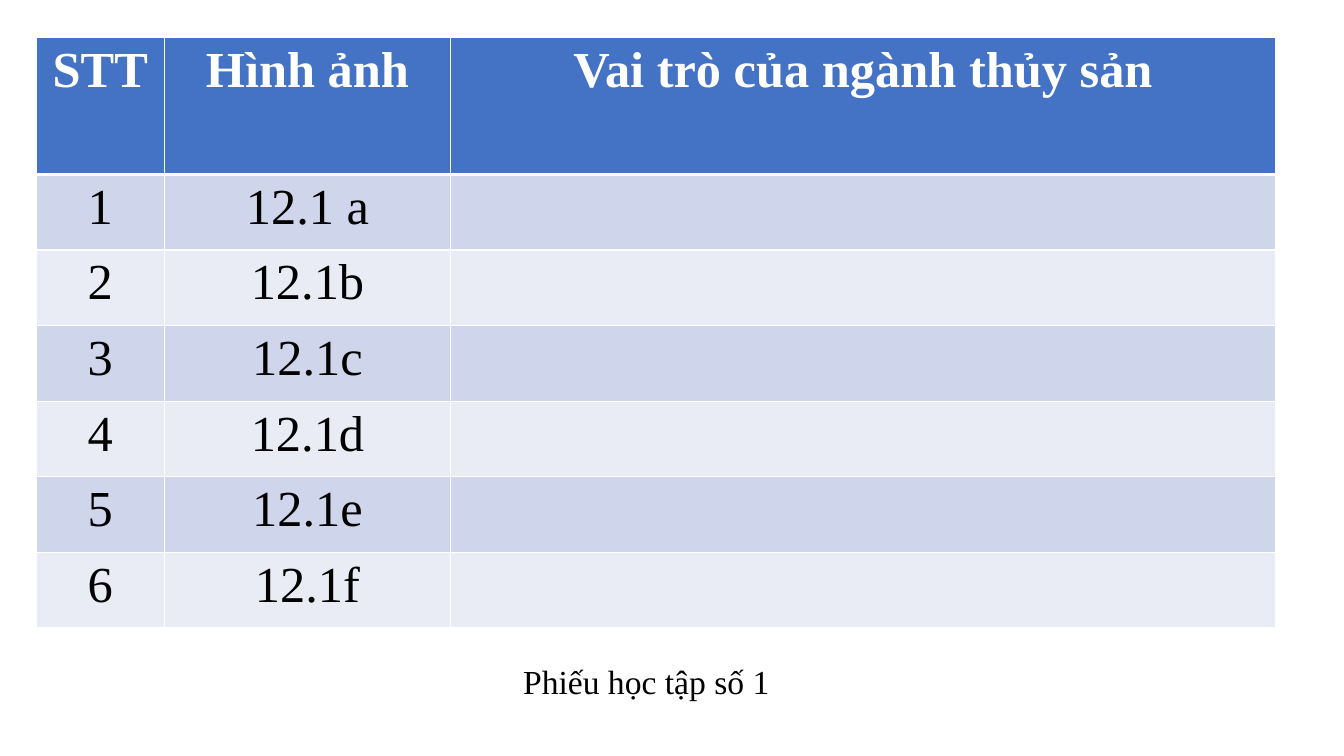
from dataclasses import dataclass

from lxml.etree import SubElement
from pptx import Presentation
from pptx.dml.color import RGBColor
from pptx.enum.text import MSO_AUTO_SIZE, PP_ALIGN
from pptx.oxml.ns import qn
from pptx.util import Inches, Pt


@dataclass(frozen=True)
class Theme:
    """Hold the colours, font and type sizes of the worksheet."""
    font: str = "Times New Roman"
    header: str = "4472C4"
    bands: tuple = ("CFD5EA", "E9EBF5")
    white: str = "FFFFFF"
    black: str = "000000"
    table_size: int = 36
    caption_size: int = 24
    rule: int = 1
    header_rule: int = 3


THEME = Theme()
HEADERS = ["STT", "Hình ảnh", "Vai trò của ngành thủy sản"]
FIGURES = ["12.1 a", "12.1b", "12.1c", "12.1d", "12.1e", "12.1f"]
COL_WIDTHS = [1.27, 2.84, 8.18]
HEADER_HEIGHT, ROW_HEIGHT = 1.36, 0.75


def write(tf, text, size, color=THEME.black, bold=False):
    """Write one centred line in a text frame."""
    p = tf.paragraphs[0]
    p.alignment = PP_ALIGN.CENTER
    r = p.add_run()
    r.text = text
    r.font.name = THEME.font
    r.font.size = Pt(size)
    r.font.bold = bold
    r.font.color.rgb = RGBColor.from_string(color)


def set_borders(cell, top, bottom):
    """Give a cell white borders of the given point widths."""
    tc_pr = cell._tc.get_or_add_tcPr()
    widths = {"a:lnL": THEME.rule, "a:lnR": THEME.rule, "a:lnT": top, "a:lnB": bottom}
    for tag, width in widths.items():
        ln = SubElement(tc_pr, qn(tag), w=str(Pt(width)))
        fill = SubElement(ln, qn("a:solidFill"))
        SubElement(fill, qn("a:srgbClr"), val=THEME.white)


def style_cell(cell, row):
    """Set the borders and fill that belong to a table row."""
    top = THEME.header_rule if row == 1 else THEME.rule
    bottom = THEME.header_rule if row == 0 else THEME.rule
    set_borders(cell, top, bottom)
    color = THEME.bands[(row - 1) % 2] if row else THEME.header
    cell.fill.solid()
    cell.fill.fore_color.rgb = RGBColor.from_string(color)


def add_worksheet(s, left, top):
    """Add the table with one row for each figure."""
    rows = [HEADERS] + [[str(i), name, ""] for i, name in enumerate(FIGURES, 1)]
    heights = [HEADER_HEIGHT] + [ROW_HEIGHT] * len(FIGURES)
    table = s.shapes.add_table(len(rows), len(HEADERS), Inches(left), Inches(top),
                               Inches(sum(COL_WIDTHS)), Inches(sum(heights))).table
    for column, width in zip(table.columns, COL_WIDTHS):
        column.width = Inches(width)
    for i, (values, height) in enumerate(zip(rows, heights)):
        table.rows[i].height = Inches(height)
        for j, text in enumerate(values):
            cell = table.cell(i, j)
            style_cell(cell, i)
            if text:
                write(cell.text_frame, text, THEME.table_size,
                      color=THEME.black if i else THEME.white, bold=i == 0)


def add_caption(s, text, left, top, width, height):
    """Add the centred caption below the table."""
    tf = s.shapes.add_textbox(Inches(left), Inches(top),
                              Inches(width), Inches(height)).text_frame
    tf.word_wrap = True
    tf.auto_size = MSO_AUTO_SIZE.SHAPE_TO_FIT_TEXT
    write(tf, text, THEME.caption_size)


def main():
    """Build and save the worksheet slide."""
    prs = Presentation()
    prs.slide_width, prs.slide_height = Inches(13.33), Inches(7.5)
    s = prs.slides.add_slide(prs.slide_layouts.get_by_name("Blank"))
    add_worksheet(s, 0.36, 0.37)
    add_caption(s, "Phiếu học tập số 1", 4.45, 6.51, 3.92, 0.5)
    prs.save("out.pptx")


if __name__ == "__main__":
    main()
